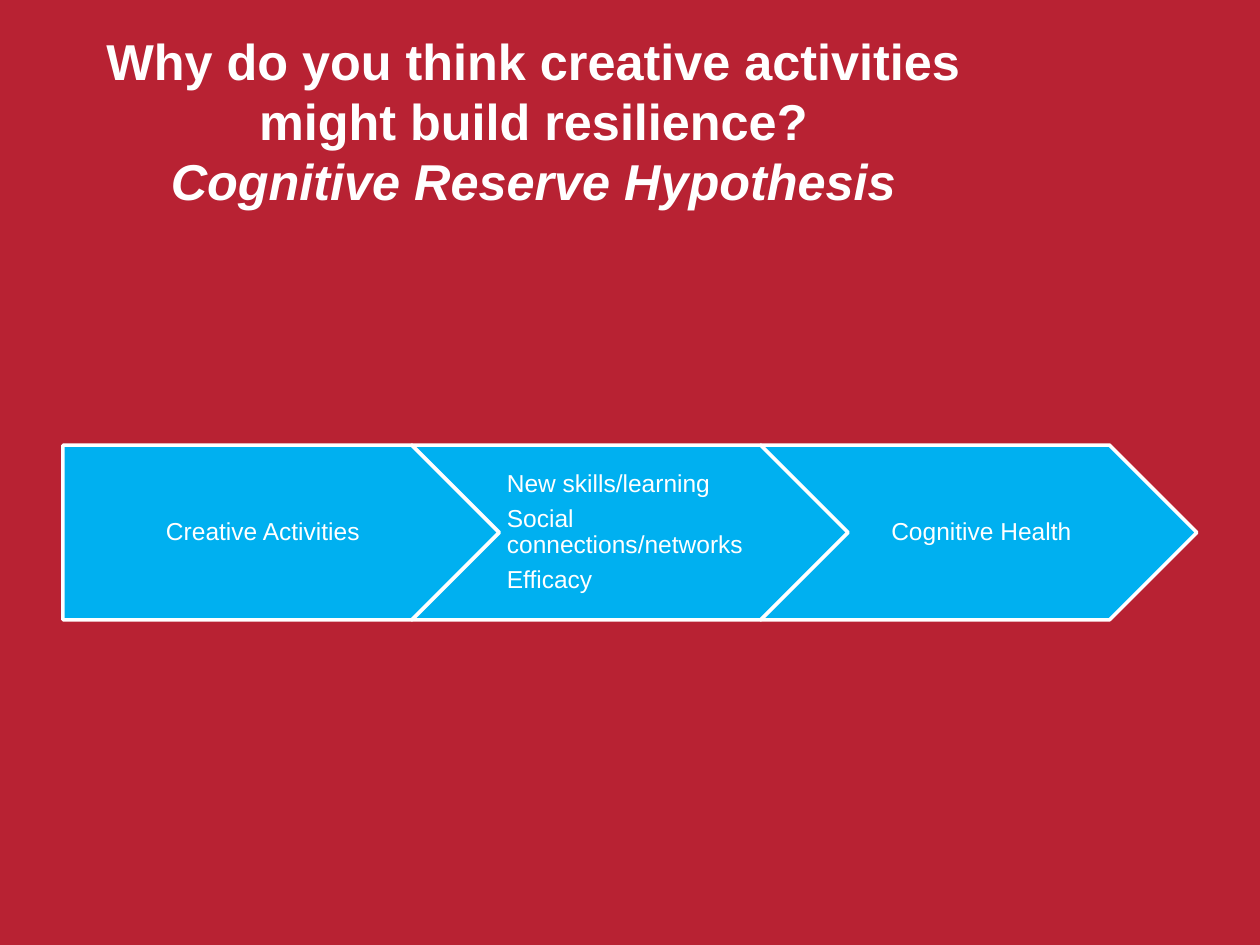
from pptx import Presentation
from pptx.dml.color import RGBColor
from pptx.enum.shapes import MSO_SHAPE as Kind
from pptx.enum.text import MSO_ANCHOR as Anchor, PP_ALIGN as Align
from pptx.util import Inches, Pt

RED = RGBColor(0xB8, 0x22, 0x33)
BLUE = RGBColor(0x00, 0xB0, 0xF0)
WHITE = RGBColor(0xFF, 0xFF, 0xFF)

WIDE, HIGH = Inches(10), Inches(7.5)
HEAD = (0.05, 0.032, 0.747, 0.3)
FLOW = (0.05, 0.471, 0.9, 0.185)
STEP = 0.8
STEPS = [
    (Kind.PENTAGON, Align.CENTER, 0.08, ["Creative Activities"]),
    (Kind.CHEVRON, Align.LEFT, 0.06,
     ["New skills/learning", "Social connections/networks", "Efficacy"]),
    (Kind.CHEVRON, Align.CENTER, 0.06, ["Cognitive Health"]),
]


def scale(box):
    """Turn shares of the slide into lengths."""
    x, y, w, h = box
    return int(x * WIDE), int(y * HIGH), int(w * WIDE), int(h * HIGH)


def put(item, **values):
    """Set each named attribute on an item."""
    for name, value in values.items():
        setattr(item, name, value)


def title(slide, box):
    """Place the question and the italic hypothesis below it."""
    frame = slide.shapes.add_textbox(*box).text_frame
    put(frame, word_wrap=True, margin_top=0, vertical_anchor=Anchor.TOP)
    para = frame.paragraphs[0]
    put(para, alignment=Align.CENTER, line_spacing=Pt(34.3))
    lines = [("Why do you think creative activities might build resilience?", False),
             ("Cognitive Reserve Hypothesis", True)]
    for text, slant in lines:
        if slant:
            para.add_line_break()
        run = para.add_run()
        run.text = text
        put(run.font, name="Arial", size=Pt(28.8), bold=True, italic=slant)
        run.font.color.rgb = WHITE


def arrow(slide, box, kind, align, left, lines):
    """Place one step of the flow with its lines of text."""
    shape = slide.shapes.add_shape(kind, *box)
    shape.shadow.inherit = False
    shape.fill.solid()
    shape.fill.fore_color.rgb = BLUE
    shape.line.color.rgb = WHITE
    shape.line.width = Pt(2)
    frame = shape.text_frame
    put(frame, word_wrap=True, vertical_anchor=Anchor.MIDDLE,
        margin_left=Inches(left), margin_right=Inches(0.02),
        margin_top=Inches(0.04), margin_bottom=Inches(0.04))
    frame.text = "\n".join(lines)
    for para in frame.paragraphs:
        put(para, alignment=align, line_spacing=0.9, space_after=Pt(4.9))
        put(para.font, name="Arial", size=Pt(14))
        para.font.color.rgb = WHITE


def flow(slide, box):
    """Place the steps so that each overlaps the one before."""
    x, y, w, h = box
    wide = w / (1 + STEP * (len(STEPS) - 1))
    for i, step in enumerate(STEPS):
        arrow(slide, (int(x + i * STEP * wide), y, int(wide), h), *step)


def main():
    """Build and save the slide."""
    deck = Presentation()
    put(deck, slide_width=WIDE, slide_height=HIGH)
    slide = deck.slides.add_slide(deck.slide_layouts[6])
    back = slide.background.fill
    back.solid()
    back.fore_color.rgb = RED
    title(slide, scale(HEAD))
    flow(slide, scale(FLOW))
    deck.save("out.pptx")


if __name__ == "__main__":
    main()
